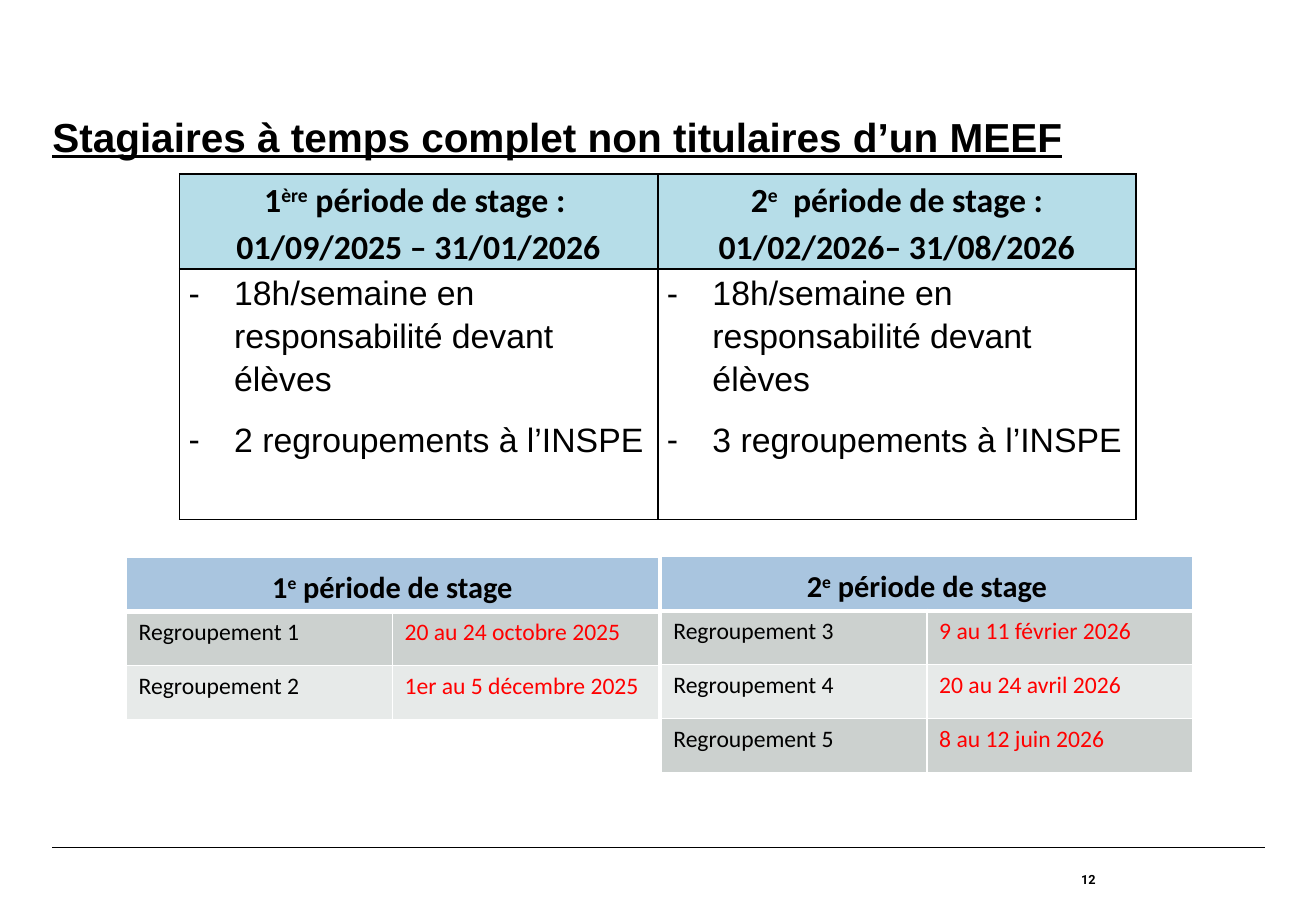
from dataclasses import dataclass

from lxml import etree
from pptx import Presentation
from pptx.dml.color import RGBColor
from pptx.enum import shapes, text
from pptx.oxml import ns
from pptx.util import Pt


@dataclass(frozen=True)
class Theme:
    """Colours, fonts and type sizes of the slide."""
    ink: str = "000000"
    date: str = "FF0000"
    white: str = "FFFFFF"
    period: str = "B6DDE8"
    head: str = "A9C5DF"
    bands: tuple = ("CCD1CF", "E7EAE9")
    sans: str = "Arial"
    table: str = "Calibri"
    number: str = "Roboto"
    title_pt: float = 24
    period_pt: float = 20
    head_pt: float = 18
    row_pt: float = 14
    number_pt: float = 7.5


T = Theme()


def add_run(p, words, size, font, color=T.ink, bold=False, raised=False):
    """Append one formatted run."""
    r = p.add_run()
    r.text = words
    r.font.size, r.font.name, r.font.bold = Pt(size), font, bold
    r.font.color.rgb = RGBColor.from_string(color)
    if raised:
        r.font._element.set("baseline", "30000")
    return r


def add_heading(p, parts, size):
    """Fill a centred heading whose second part is raised."""
    p.alignment, p.line_spacing = text.PP_ALIGN.CENTER, 1.15
    for i, words in enumerate(parts):
        add_run(p, words, size, T.table, bold=True, raised=i == 1)


def add_box(s, box):
    """Add a wrapping text box without insets and return its frame."""
    tf = s.shapes.add_textbox(*map(Pt, box)).text_frame
    tf.word_wrap = True
    tf.margin_left = tf.margin_top = tf.margin_right = tf.margin_bottom = 0
    return tf


def style_cell(cell, fill, border, top=1, bottom=1):
    """Set the fill and the four borders of a cell."""
    if fill:
        cell.fill.solid()
        cell.fill.fore_color.rgb = RGBColor.from_string(fill)
    else:
        cell.fill.background()
    tcPr = cell._tc.get_or_add_tcPr()
    for i, (side, width) in enumerate(zip("LRTB", (1, 1, top, bottom))):
        ln = etree.Element(ns.qn(f"a:ln{side}"), w=str(Pt(width)))
        solid = etree.SubElement(ln, ns.qn("a:solidFill"))
        etree.SubElement(solid, ns.qn("a:srgbClr"), val=border)
        tcPr.insert(i, ln)


def add_grid(s, box, heights):
    """Add a plain two-column table with the given row heights."""
    tbl = s.shapes.add_table(len(heights), 2, *map(Pt, box)).table
    tbl.first_row = tbl.horz_banding = False
    for col in tbl.columns:
        col.width = Pt(box[2] / 2)
    for row, height in zip(tbl.rows, heights):
        row.height = Pt(height)
    return tbl


def add_dash(p):
    """Give a paragraph a hanging dash bullet."""
    pPr = p._p.get_or_add_pPr()
    pPr.set("marL", str(Pt(27)))
    pPr.set("indent", str(Pt(-27)))
    etree.SubElement(pPr, ns.qn("a:buFont"), typeface=T.sans)
    etree.SubElement(pPr, ns.qn("a:buChar"), char="-")
    p.line_spacing, p.space_after = 1.15, Pt(10)


def add_periods(s, box, periods):
    """Build the table of the two training periods."""
    head = 56.3
    tbl = add_grid(s, box, (head, box[3] - head))
    for c, (headings, duties) in enumerate(periods):
        for r, fill in enumerate((T.period, None)):
            cell = tbl.cell(r, c)
            style_cell(cell, fill, T.ink)
            cell.margin_left = cell.margin_right = Pt(5.4)
            cell.margin_top = cell.margin_bottom = 0
            tf = cell.text_frame
            for i, item in enumerate((headings, duties)[r]):
                p = tf.add_paragraph() if i else tf.paragraphs[0]
                if r:
                    add_dash(p)
                    add_run(p, item, T.period_pt, T.sans)
                else:
                    add_heading(p, item, T.period_pt)


def add_meetings(s, box, ordinal, first, dates):
    """Build the numbered list of meetings of one period."""
    left, top, width, step = box
    rows = len(dates) + 1
    tbl = add_grid(s, (left, top, width, rows * step), [step] * rows)
    for c in range(2):
        style_cell(tbl.cell(0, c), T.head, T.white, bottom=3)
    tbl.cell(0, 0).merge(tbl.cell(0, 1))
    parts = (ordinal, "e", " période de stage")
    add_heading(tbl.cell(0, 0).text_frame.paragraphs[0], parts, T.head_pt)
    for i, date in enumerate(dates):
        pair = ((f"Regroupement {first + i}", T.ink), (date, T.date))
        for c, (words, color) in enumerate(pair):
            cell = tbl.cell(i + 1, c)
            style_cell(cell, T.bands[i % 2], T.white, top=1 if i else 3)
            p = cell.text_frame.paragraphs[0]
            add_run(p, words, T.row_pt, T.table, color)


def add_title(s, box, words):
    """Place the underlined title."""
    p = add_box(s, box).paragraphs[0]
    p.space_after = Pt(5)
    add_run(p, words, T.title_pt, T.sans, bold=True).font.underline = True


def add_footer(s, box, number):
    """Draw the footer rule and the page number under it."""
    left, top, width, height = box
    line = s.shapes.add_connector(shapes.MSO_CONNECTOR.STRAIGHT, Pt(left),
                                  Pt(top), Pt(left + width), Pt(top))
    line.line.color.rgb = RGBColor.from_string(T.ink)
    line.line.width = Pt(0.8)
    etree.SubElement(line._element.spPr, ns.qn("a:effectLst"))
    tf = add_box(s, (left + 503.3, top, 115.2, height))
    tf.vertical_anchor = text.MSO_ANCHOR.MIDDLE
    p = tf.paragraphs[0]
    p.alignment = text.PP_ALIGN.RIGHT
    add_run(p, number, T.number_pt, T.number, bold=True)


def build_slide(s):
    """Place all the regions of the slide."""
    duty = "18h/semaine en responsabilité devant élèves"
    periods = (
        ((("1", "ère", " période de stage : "), ("01/09/2025 – 31/01/2026",)),
         (duty, "2 regroupements à l’INSPE")),
        ((("2", "e", "  période de stage : 01/02/2026– 31/08/2026"),),
         (duty, "3 regroupements à l’INSPE")),
    )
    add_footer(s, (31, 502.4, 718.6, 37.6), "12")
    add_title(s, (31, 66.2, 718.6, 425.5),
              "Stagiaires à temps complet non titulaires d’un MEEF")
    add_periods(s, (106.4, 103.2, 567, 204.6), periods)
    add_meetings(s, (75, 330.5, 315.2, 32), "1", 1,
                 ("20 au 24 octobre 2025", "1er au 5 décembre 2025"))
    add_meetings(s, (391.9, 330, 315.2, 32), "2", 3,
                 ("9 au 11 février 2026", "20 au 24 avril 2026",
                  "8 au 12 juin 2026"))


def main():
    """Create the presentation and save it."""
    prs = Presentation()
    prs.slide_width, prs.slide_height = Pt(780), Pt(540)
    build_slide(prs.slides.add_slide(prs.slide_layouts[6]))
    prs.save("out.pptx")


if __name__ == "__main__":
    main()
